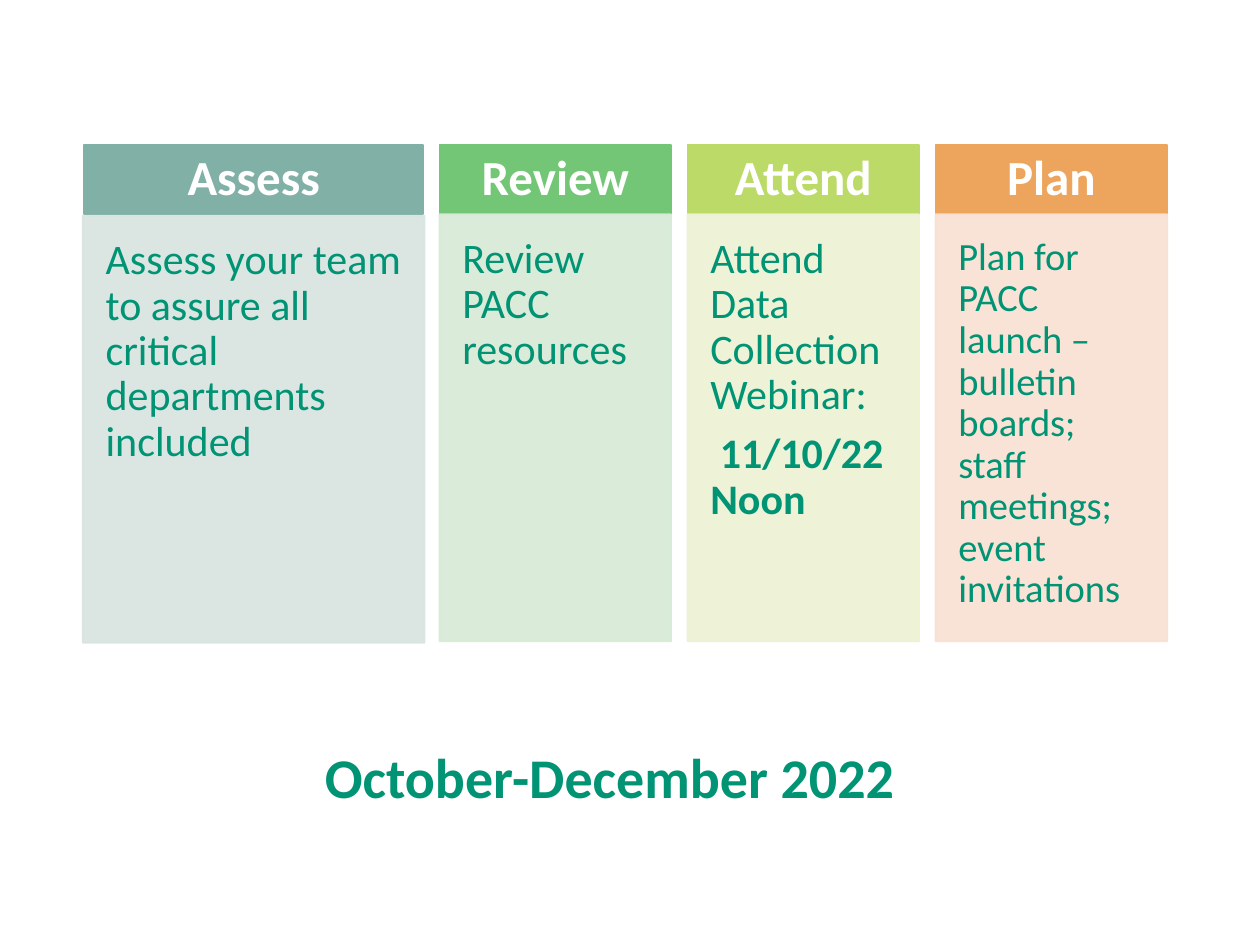
from lxml.etree import SubElement
from pptx import Presentation
from pptx.dml.color import RGBColor
from pptx.enum.shapes import MSO_SHAPE
from pptx.enum.text import MSO_ANCHOR, PP_ALIGN
from pptx.oxml.ns import qn
from pptx.util import Cm, Pt

WHITE = RGBColor(0xFF, 0xFF, 0xFF)
GREEN = RGBColor(0x00, 0x93, 0x74)
TEAL, PALE_TEAL = RGBColor(0x80, 0xB0, 0xA6), RGBColor(0xD8, 0xE4, 0xE1)
LEAF, PALE_LEAF = RGBColor(0x73, 0xC6, 0x75), RGBColor(0xD6, 0xEB, 0xD5)
LIME, PALE_LIME = RGBColor(0xBC, 0xDA, 0x67), RGBColor(0xED, 0xF2, 0xD3)
ORANGE, PALE_ORANGE = RGBColor(0xED, 0xA5, 0x5D), RGBColor(0xF8, 0xE1, 0xD2)

FIRST_LEFT, GAP = 1.7, 0.33
HEADER_TOP, HEADER_HEIGHT = 2.92, 1.4
BODY_TOP, BODY_HEIGHT = 4.32, 8.61

# heading, width, body overhang, header colour, body colour, text size, paragraphs
COLUMNS = [
    ("Assess", 6.83, 0.03, TEAL, PALE_TEAL, 24,
     ["Assess your team to assure all critical departments included"]),
    ("Review", 4.67, 0, LEAF, PALE_LEAF, 24, ["Review PACC resources"]),
    ("Attend", 4.67, 0, LIME, PALE_LIME, 24,
     ["Attend Data Collection Webinar:", " 11/10/22 Noon"]),
    ("Plan", 4.67, 0, ORANGE, PALE_ORANGE, 22,
     ["Plan for PACC launch – bulletin boards; staff meetings; event invitations"]),
]


def add_panel(left, top, width, height, color, inset):
    panel = page.shapes.add_shape(
        MSO_SHAPE.RECTANGLE, Cm(left), Cm(top), Cm(width), Cm(height))
    panel.shadow.inherit = False
    panel.fill.solid()
    panel.fill.fore_color.rgb = color
    panel.line.color.rgb = color
    panel.line.width = Pt(1)
    frame = panel.text_frame
    frame.word_wrap = True
    frame.margin_left = frame.margin_right = Cm(inset)
    frame.margin_top = frame.margin_bottom = Cm(inset)
    return panel


def format_paragraph(paragraph, size, color, bold, align):
    paragraph.alignment = align
    paragraph.line_spacing = 0.9
    font = paragraph.runs[0].font
    font.name = "Calibri"
    font.size = Pt(size)
    font.bold = bold
    font.color.rgb = color


deck = Presentation()
deck.slide_width, deck.slide_height = Cm(25.4), Cm(19.05)
page = deck.slides.add_slide(deck.slide_layouts[6])

left = FIRST_LEFT
for heading, width, overhang, strong, pale, size, texts in COLUMNS:
    header = add_panel(left, HEADER_TOP, width, HEADER_HEIGHT, strong, 0.38)
    header.text_frame.vertical_anchor = MSO_ANCHOR.MIDDLE
    header.text_frame.text = heading
    format_paragraph(header.text_frame.paragraphs[0], 28, WHITE, True, PP_ALIGN.CENTER)

    body = add_panel(left - overhang, BODY_TOP + overhang, width + 2 * overhang,
                     BODY_HEIGHT, pale, 0.46)
    for color_element in body._element.spPr.iter(qn("a:srgbClr")):
        SubElement(color_element, qn("a:alpha"), val="90000")
    body.text_frame.vertical_anchor = MSO_ANCHOR.TOP
    body.text_frame.text = "\n".join(texts)
    for index, paragraph in enumerate(body.text_frame.paragraphs):
        format_paragraph(paragraph, size, GREEN, index > 0, PP_ALIGN.LEFT)
        paragraph.space_after = Pt(8)
    left += width + GAP

title = page.shapes.add_textbox(Cm(6.15), Cm(14.17), Cm(12.29), Cm(2.29))
title.text_frame.word_wrap = True
title.text_frame.vertical_anchor = MSO_ANCHOR.BOTTOM
title.text_frame.text = "October-December 2022"
format_paragraph(title.text_frame.paragraphs[0], 32, GREEN, True, PP_ALIGN.CENTER)

deck.save("out.pptx")
